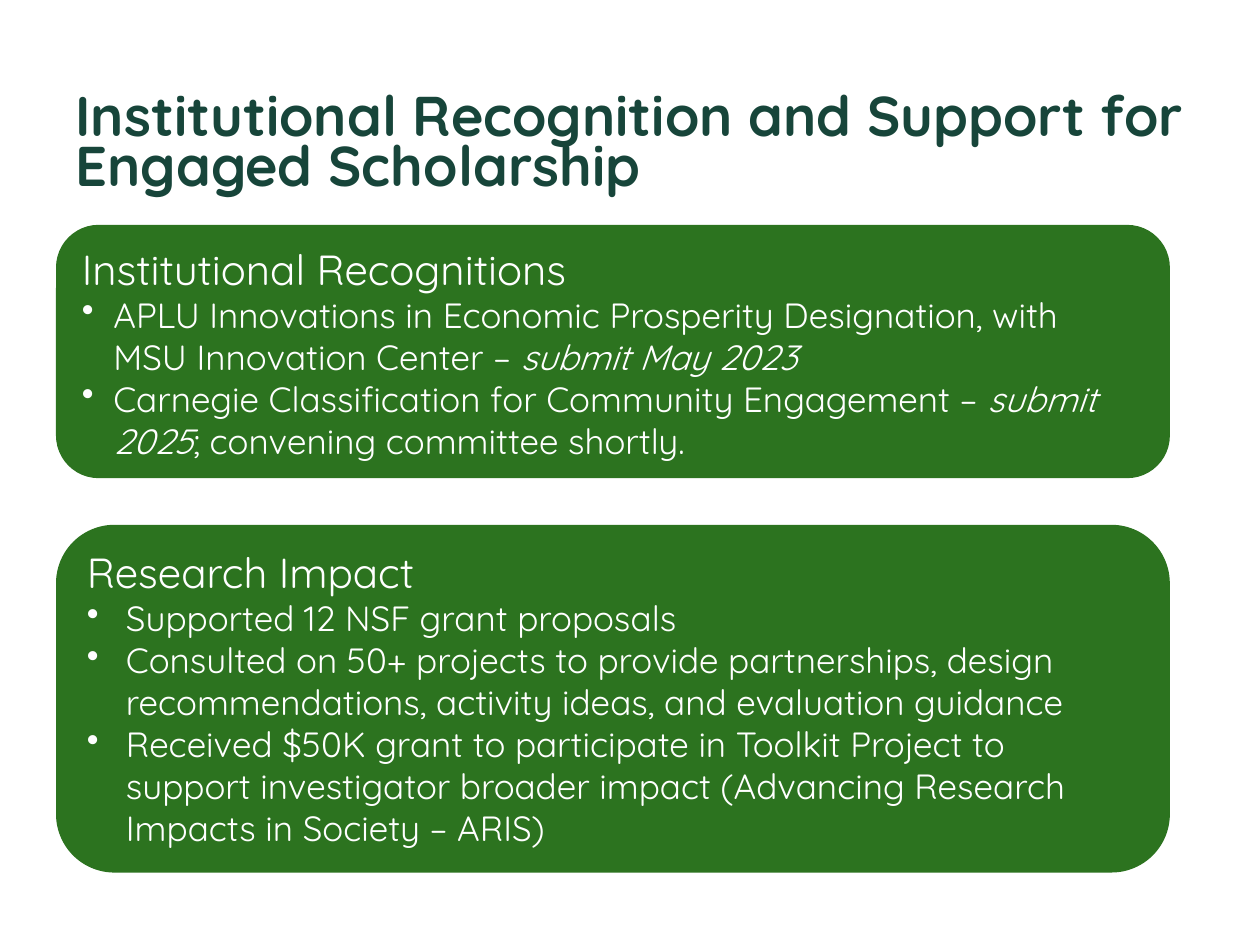
import pptx
import pptx.dml.color
import pptx.enum.shapes
import pptx.util
from lxml import etree
from pptx.util import Inches, Pt

FONT = "Quicksand"
GREEN = "2C731F"


def rgb(value):
    return pptx.dml.color.RGBColor.from_string(value)


def add_text(paragraph, runs, size, color, indent, hanging=0):
    properties = paragraph._p.get_or_add_pPr()
    properties.set("marL", str(Inches(indent)))
    properties.set("indent", str(-Inches(hanging)))
    if hanging:
        bullet = etree.SubElement(properties, pptx.oxml.ns.qn("a:buChar"))
        bullet.set("char", "•")
    paragraph.font.name = FONT
    paragraph.font.size = Pt(size)
    paragraph.font.color.rgb = rgb(color)
    for words, italic in runs:
        run = paragraph.add_run()
        run.text = words
        if italic:
            run.font.italic = True


deck = pptx.Presentation()
deck.slide_width = Inches(10)
deck.slide_height = Inches(7.5)
slide = deck.slides.add_slide(deck.slide_layouts[6])

for top, height in [(1.79, 2), (4.17, 2.75)]:
    panel = slide.shapes.add_shape(
        pptx.enum.shapes.MSO_SHAPE.ROUNDED_RECTANGLE,
        Inches(0.45), Inches(top), Inches(8.83), Inches(height))
    panel.shadow.inherit = False
    panel.fill.solid()
    panel.fill.fore_color.rgb = rgb(GREEN)
    panel.line.color.rgb = rgb(GREEN)
    panel.line.width = Pt(0.75)

frames = []
for left, top, width, height, inset_top, inset_right in [
    (0.42, 0.61, 9.16, 1.43, 0.15, 0),
    (0.64, 1.92, 8.47, 4.84, 0.01, 0.15),
]:
    frame = slide.shapes.add_textbox(
        Inches(left), Inches(top), Inches(width), Inches(height)).text_frame
    frame.word_wrap = True
    frame.margin_left = frame.margin_bottom = 0
    frame.margin_top = Inches(inset_top)
    frame.margin_right = Inches(inset_right)
    frames.append(frame)
title, body = frames

headline = title.paragraphs[0]
add_text(headline, [("Institutional Recognition and Support for Engaged Scholarship", False)],
         32, "17453A", 0.18)
headline.font.bold = True
headline.line_spacing = 0.75

sections = [
    ("Institutional Recognitions", 0.01, 0.26, 0.25, [
        [("APLU Innovations in Economic Prosperity Designation, with MSU Innovation Center – ", False),
         ("submit May 2023", True)],
        [("Carnegie Classification for Community Engagement – ", False),
         ("submit 2025", True),
         ("; convening committee shortly.", False)],
    ]),
    ("Research Impact", 0.05, 0.36, 0.31, [
        [("Supported 12 NSF grant proposals", False)],
        [("Consulted on 50+ projects to provide partnerships, design recommendations, "
          "activity ideas, and evaluation guidance", False)],
        [("Received $50K grant to participate in Toolkit Project to support investigator "
          "broader impact (Advancing Research Impacts in Society – ARIS)", False)],
    ]),
]

for number, (heading, heading_indent, indent, hanging, points) in enumerate(sections):
    if number == 0:
        section_heading = body.paragraphs[0]
    else:
        section_heading = body.add_paragraph()
        section_heading.space_before = Pt(48.4)
    add_text(section_heading, [(heading, False)], 24, "FFFFFF", heading_indent)
    for point in points:
        add_text(body.add_paragraph(), point, 20, "FFFFFF", indent, hanging)

deck.save("out.pptx")
